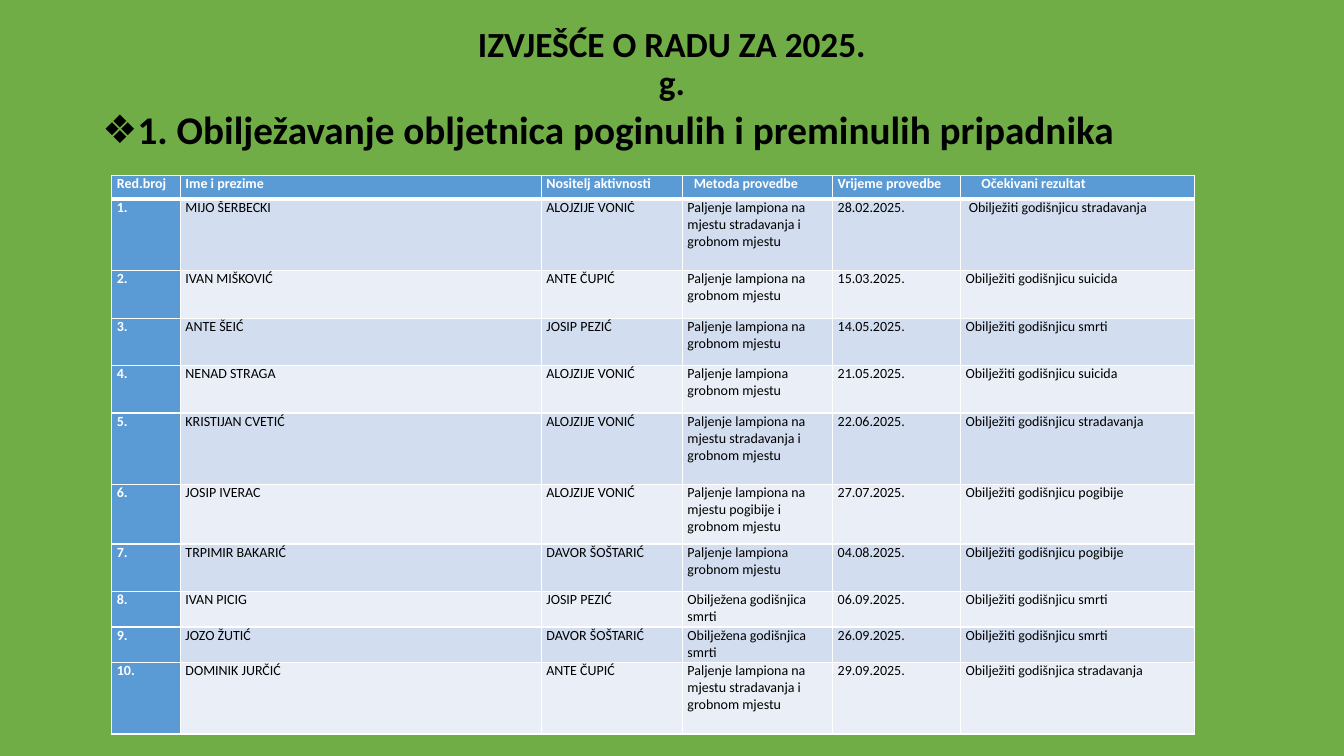
from copy import deepcopy

from lxml.etree import SubElement
from pptx import Presentation
from pptx.dml.color import RGBColor
from pptx.enum.text import MSO_ANCHOR, MSO_AUTO_SIZE, PP_ALIGN
from pptx.oxml.ns import qn
from pptx.util import Pt

COLORS = {
    "background": "70AD47",
    "accent": "5B9BD5",
    "odd": "D2DEEF",
    "even": "EAEFF7",
    "white": "FFFFFF",
    "black": "000000",
}
FONT = "Calibri"

COLUMN_WIDTHS = [49, 257.8, 100.8, 107.3, 91.4, 167]
ROW_HEIGHTS = [17, 51.1, 33.9, 33.9, 33.9, 51.1, 42.5, 33.9, 25.4, 25.4, 51.1]
HEADINGS = ["Red.broj", "Ime i prezime", "Nositelj aktivnosti",
            "Metoda provedbe", "Vrijeme provedbe", "Očekivani rezultat"]
HEADING_INDENTS = [0, 0, 0, 4.5, 0, 11.3]

AT_DEATH_SITE = "Paljenje lampiona na mjestu stradavanja i grobnom mjestu"
AT_GRAVE = "Paljenje lampiona na grobnom mjestu"
GRAVE_SHORT = "Paljenje lampiona grobnom mjestu"
MARKED = "Obilježena godišnjica smrti"
ACTIVITIES = [
    ("MIJO ŠERBECKI", "ALOJZIJE VONIĆ", AT_DEATH_SITE, "28.02.2025.",
     " Obilježiti godišnjicu stradavanja"),
    ("IVAN MIŠKOVIĆ", "ANTE ČUPIĆ", AT_GRAVE, "15.03.2025.",
     "Obilježiti godišnjicu suicida"),
    ("ANTE ŠEIĆ", "JOSIP PEZIĆ", AT_GRAVE, "14.05.2025.",
     "Obilježiti godišnjicu smrti"),
    ("NENAD STRAGA", "ALOJZIJE VONIĆ", GRAVE_SHORT, "21.05.2025.",
     "Obilježiti godišnjicu suicida"),
    ("KRISTIJAN CVETIĆ", "ALOJZIJE VONIĆ", AT_DEATH_SITE, "22.06.2025.",
     "Obilježiti godišnjicu stradavanja"),
    ("JOSIP IVERAC", "ALOJZIJE VONIĆ",
     "Paljenje lampiona na mjestu pogibije i grobnom mjestu", "27.07.2025.",
     "Obilježiti godišnjicu pogibije"),
    ("TRPIMIR BAKARIĆ", "DAVOR ŠOŠTARIĆ", GRAVE_SHORT, "04.08.2025.",
     "Obilježiti godišnjicu pogibije"),
    ("IVAN PICIG", "JOSIP PEZIĆ", MARKED, "06.09.2025.",
     "Obilježiti godišnjicu smrti"),
    ("JOZO ŽUTIĆ", "DAVOR ŠOŠTARIĆ", MARKED, "26.09.2025.",
     "Obilježiti godišnjicu smrti"),
    ("DOMINIK JURČIĆ", "ANTE ČUPIĆ", AT_DEATH_SITE, "29.09.2025.",
     "Obilježiti godišnjica stradavanja"),
]


def write(frame, text, size=10, color="black", bold=False, align=PP_ALIGN.LEFT,
          spacing=1.0, before=0, left=0, hanging=0, bullet=None):
    """Fill a text frame with one formatted paragraph."""
    paragraph = frame.paragraphs[0]
    paragraph.text = text
    paragraph.alignment = align
    paragraph.line_spacing = spacing
    paragraph.space_before = Pt(before)
    for run in paragraph.runs:
        run.font.name = FONT
        run.font.size = Pt(size)
        run.font.bold = bold
        run.font.color.rgb = RGBColor.from_string(COLORS[color])
    for line_break in paragraph._p.findall(qn("a:br")):
        line_break.append(deepcopy(paragraph.runs[0].font._rPr))
    properties = paragraph._p.get_or_add_pPr()
    properties.set("marL", str(Pt(left)))
    properties.set("indent", str(-Pt(hanging)))
    if bullet:
        SubElement(properties, qn("a:buChar"), char=bullet)


class ReportSlide:
    """Hold the current slide and draw its elements in the report style."""

    def __init__(self, deck):
        self.slide = deck.slides.add_slide(deck.slide_layouts[1])
        fill = self.slide.background.fill
        fill.solid()
        fill.fore_color.rgb = RGBColor.from_string(COLORS["background"])

    def placeholder(self, index, box, text, anchor, **style):
        """Move a template placeholder and write its text."""
        holder = self.slide.placeholders[index]
        holder.left, holder.top, holder.width, holder.height = map(Pt, box)
        frame = holder.text_frame
        frame.word_wrap = True
        frame.auto_size = MSO_AUTO_SIZE.NONE
        frame.vertical_anchor = anchor
        write(frame, text, bold=True, spacing=0.9, **style)

    def borders(self, cell, top, bottom):
        """Draw the white lines around a cell."""
        properties = cell._tc.get_or_add_tcPr()
        for side, width in (("L", 1), ("R", 1), ("T", top), ("B", bottom)):
            line = SubElement(properties, qn(f"a:ln{side}"), w=str(Pt(width)))
            paint = SubElement(line, qn("a:solidFill"))
            SubElement(paint, qn("a:srgbClr"), val=COLORS["white"])

    def cell(self, cell, text, fill, top=1, bottom=1, **style):
        """Format one table cell."""
        cell.margin_left = cell.margin_right = Pt(3.6)
        cell.margin_top = cell.margin_bottom = Pt(0)
        self.borders(cell, top, bottom)
        cell.fill.solid()
        cell.fill.fore_color.rgb = RGBColor.from_string(COLORS[fill])
        write(cell.text_frame, text, **style)

    def table(self, left, top):
        """Add the table of activities."""
        table = self.slide.shapes.add_table(
            len(ROW_HEIGHTS), len(COLUMN_WIDTHS), Pt(left), Pt(top),
            Pt(sum(COLUMN_WIDTHS)), Pt(sum(ROW_HEIGHTS))).table
        table.first_col = True
        for column, width in zip(table.columns, COLUMN_WIDTHS):
            column.width = Pt(width)
        for row, height in zip(table.rows, ROW_HEIGHTS):
            row.height = Pt(height)
        for column, heading in enumerate(HEADINGS):
            self.cell(table.cell(0, column), heading, "accent", bottom=3,
                      color="white", bold=True, left=HEADING_INDENTS[column])
        for number, activity in enumerate(ACTIVITIES, start=1):
            top_line = 3 if number == 1 else 1
            self.cell(table.cell(number, 0), f"{number}.", "accent",
                      top=top_line, color="white", bold=True)
            band = "odd" if number % 2 else "even"
            for column, detail in enumerate(activity, start=1):
                self.cell(table.cell(number, column), detail, band, top=top_line)


def main():
    """Build and save the report slide."""
    deck = Presentation()
    deck.slide_width, deck.slide_height = Pt(960), Pt(540)
    report = ReportSlide(deck)
    report.placeholder(0, (66, 17.3, 828, 59), "IZVJEŠĆE O RADU ZA 2025.\vg.",
                       MSO_ANCHOR.MIDDLE, size=25.2, align=PP_ALIGN.CENTER)
    report.placeholder(1, (66, 75.6, 828, 448.6),
                       "1. Obilježavanje obljetnica poginulih i preminulih pripadnika",
                       MSO_ANCHOR.TOP, size=28, before=10, left=18, hanging=18,
                       bullet="❖")
    report.table(79.9, 125.3)
    deck.save("out.pptx")


if __name__ == "__main__":
    main()
